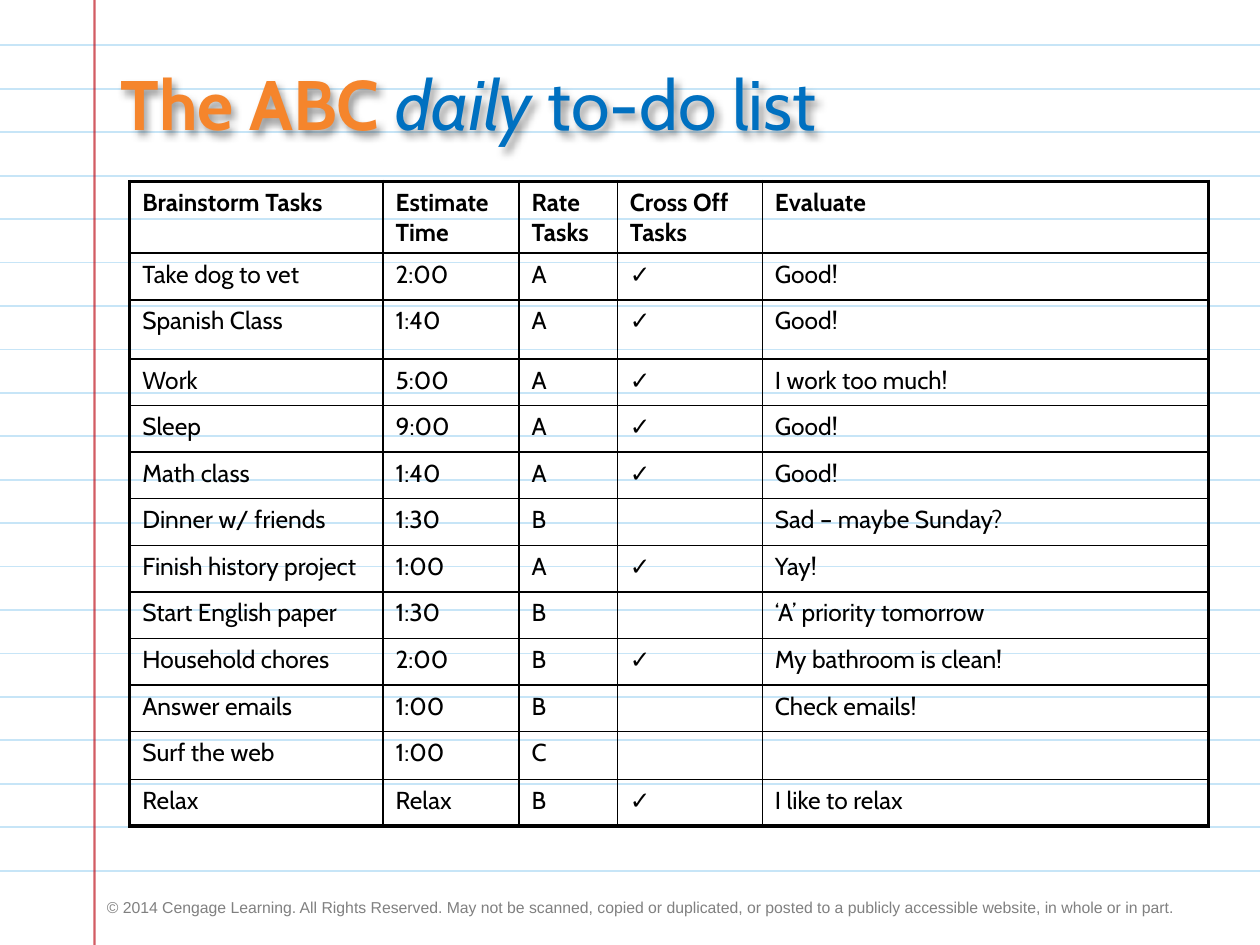
import pptx
import pptx.dml.color
import pptx.enum.shapes
import pptx.enum.text
import pptx.oxml
import pptx.oxml.ns
import pptx.util
from pptx.util import Inches

COLORS = {
    "rule": "C7E5F7",
    "margin": "BD101B",
    "orange": "F5852C",
    "blue": "0070C0",
    "ink": "000000",
    "footer": "808080",
}
FONT = "Cabin"
COLUMN_WIDTHS = [2.01, 1.08, 0.78, 1.15, 3.54]
ROW_HEIGHTS = [0.57, 0.37, 0.47] + [0.37] * 8 + [0.38, 0.37]
TASKS = [
    ("Brainstorm Tasks", "Estimate Time", "Rate Tasks", "Cross Off Tasks", "Evaluate"),
    ("Take dog to vet", "2:00", "A", "✓", "Good!"),
    ("Spanish Class", "1:40", "A", "✓", "Good!"),
    ("Work", "5:00", "A", "✓", "I work too much!"),
    ("Sleep", "9:00", "A", "✓", "Good!"),
    ("Math class", "1:40", "A", "✓", "Good!"),
    ("Dinner w/ friends", "1:30", "B", "", "Sad – maybe Sunday?"),
    ("Finish history project", "1:00", "A", "✓", "Yay!"),
    ("Start English paper", "1:30", "B", "", "‘A’ priority tomorrow"),
    ("Household chores", "2:00", "B", "✓", "My bathroom is clean!"),
    ("Answer emails", "1:00", "B", "", "Check emails!"),
    ("Surf the web", "1:00", "C", "", ""),
    ("Relax", "Relax", "B", "✓", "I like to relax"),
]


def rgb(name):
    """Return the named colour."""
    return pptx.dml.color.RGBColor.from_string(COLORS[name])


def xml_part(markup):
    """Parse one DrawingML element whose root is left open for the namespace."""
    return pptx.oxml.parse_xml(markup % pptx.oxml.ns.nsdecls("a"))


def style_font(font, size, color, name=FONT, bold=False):
    """Set the face, size, colour and weight of a font."""
    font.name = name
    font.size = pptx.util.Pt(size)
    font.bold = bold
    font.color.rgb = rgb(color)


def add_line(page, start, end, color, width):
    """Draw a straight line without a shadow and return it."""
    line = page.shapes.add_connector(
        pptx.enum.shapes.MSO_CONNECTOR.STRAIGHT, *start, *end)
    line.line.color.rgb = rgb(color)
    line.line.width = pptx.util.Pt(width)
    line._element.spPr.append(xml_part("<a:effectLst %s/>"))
    return line


def add_text_box(page, left, top, width, height):
    """Add a wrapping text box and return it."""
    box = page.shapes.add_textbox(left, top, width, height)
    box.text_frame.word_wrap = True
    return box


def add_paper(page, left, top, width, height):
    """Draw evenly spaced notebook rules and the red margin line."""
    count, first, last = 20, Inches(0.36), Inches(6.91)
    for index in range(count):
        level = top + first + (last - first) * index // (count - 1)
        add_line(page, (left, level), (left + width, level), "rule", 1)
    edge = left + Inches(0.75)
    margin = add_line(page, (edge, top), (edge, top + height), "margin", 1.25)
    shade = margin._element.spPr.find(".//" + pptx.oxml.ns.qn("a:srgbClr"))
    shade.append(xml_part('<a:alpha %s val="68000"/>'))


def add_footer(page, left, top, width, height):
    """Place the copyright line."""
    box = add_text_box(page, left, top, width, height)
    para = box.text_frame.paragraphs[0]
    para.text = ("© 2014 Cengage Learning. All Rights Reserved. May not be scanned, "
                 "copied or duplicated, or posted to a publicly accessible website, "
                 "in whole or in part.")
    style_font(para.font, 9, "footer", "Arial")


def add_title(page, left, top, width, height):
    """Place the two-coloured title with its soft shadow."""
    box = add_text_box(page, left, top, width, height)
    box.text_frame.vertical_anchor = pptx.enum.text.MSO_ANCHOR.MIDDLE
    para = box.text_frame.paragraphs[0]
    for text, color, bold, italic in (
            ("The ABC ", "orange", True, False),
            ("daily", "blue", False, True),
            (" to-do list", "blue", False, False)):
        span = para.add_run()
        span.text = text
        style_font(span.font, 40, color, bold=bold)
        span.font.italic = italic
    box._element.spPr.append(xml_part(
        '<a:effectLst %s><a:outerShdw blurRad="50800" dist="38100" dir="2700000">'
        '<a:srgbClr val="000000"><a:alpha val="40000"/></a:srgbClr>'
        '</a:outerShdw></a:effectLst>'))


def set_borders(cell, outer_sides):
    """Draw thick borders on the outer sides of a cell and thin ones elsewhere."""
    properties = cell._tc.get_or_add_tcPr()
    for side in "LRTB":
        width = pptx.util.Pt(2.25 if side in outer_sides else 1)
        properties.append(xml_part(
            f'<a:ln{side} %s w="{width}"><a:solidFill><a:srgbClr val="{COLORS["ink"]}"/>'
            f'</a:solidFill></a:ln{side}>'))


def add_task_table(page, left, top, width, height):
    """Build the to-do table with a thick outer frame."""
    last_row, last_column = len(TASKS) - 1, len(COLUMN_WIDTHS) - 1
    table = page.shapes.add_table(
        len(TASKS), len(COLUMN_WIDTHS), left, top, width, height).table
    table.first_row = table.horz_banding = False
    for column, size in zip(table.columns, COLUMN_WIDTHS):
        column.width = Inches(size)
    for row, size in zip(table.rows, ROW_HEIGHTS):
        row.height = Inches(size)
    for row_index, texts in enumerate(TASKS):
        for column_index, text in enumerate(texts):
            cell = table.cell(row_index, column_index)
            outer_sides = [side for side, is_outer in (
                ("L", column_index == 0), ("R", column_index == last_column),
                ("T", row_index == 0), ("B", row_index == last_row)) if is_outer]
            set_borders(cell, outer_sides)
            cell.fill.background()
            para = cell.text_frame.paragraphs[0]
            para.text = text
            style_font(para.font, 14, "ink", bold=row_index == 0)


def main():
    """Build and save the slide."""
    deck = pptx.Presentation()
    deck.slide_width, deck.slide_height = Inches(10), Inches(7.5)
    page = deck.slides.add_slide(deck.slide_layouts[6])
    add_footer(page, Inches(0.75), Inches(7.08), Inches(8.84), Inches(0.4))
    add_paper(page, 0, 0, deck.slide_width, deck.slide_height)
    add_title(page, Inches(0.86), Inches(0.19), Inches(8.64), Inches(1.25))
    add_task_table(page, Inches(1.03), Inches(1.44), Inches(8.57), Inches(5.13))
    deck.save("out.pptx")


if __name__ == "__main__":
    main()
